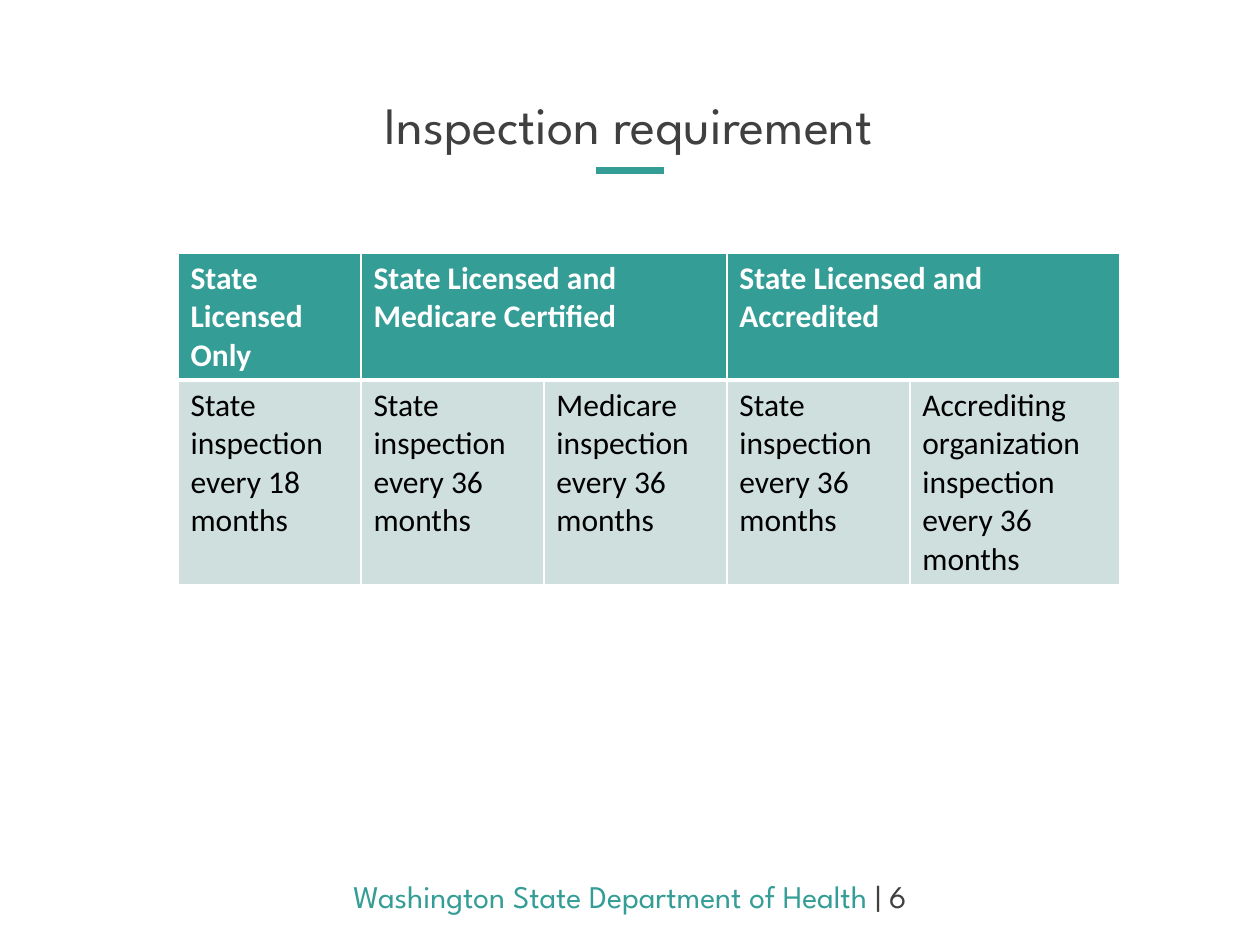
import pptx
import pptx.util
import pptx.dml.color
import pptx.enum.text
import pptx.enum.shapes
import pptx.oxml
import pptx.oxml.ns
from dataclasses import dataclass

TITLE = "Inspection requirement"
FOOTER = ("Washington State Department of Health ", "| 6")
GROUPS = [
    ("State Licensed Only", ["State inspection every 18 months"]),
    ("State Licensed and Medicare Certified",
     ["State inspection every 36 months", "Medicare inspection every 36 months"]),
    ("State Licensed and Accredited",
     ["State inspection every 36 months",
      "Accrediting organization inspection every 36 months"]),
]
COLUMNS = [183, 183, 183, 183, 210]
ROWS = [127, 205]


@dataclass(frozen=True)
class Theme:
    heading: str = "League Spartan"
    body: str = "Calibri"
    teal: str = "349D96"
    pale: str = "CEDFDD"
    gray: str = "404040"
    white: str = "FFFFFF"
    black: str = "000000"
    title_size: int = 30
    text_size: int = 18


T = Theme()
SCALE = 914400 // 126


def px(n):
    return pptx.util.Emu(n * SCALE)


def rgb(color):
    return pptx.dml.color.RGBColor.from_string(color)


def style(font, name, size, color, bold=False):
    font.name, font.size, font.bold = name, pptx.util.Pt(size), bold
    font.color.rgb = rgb(color)


def border(cell, side, width):
    tcPr = cell._tc.get_or_add_tcPr()
    ln = pptx.oxml.parse_xml(
        f'<a:{side} {pptx.oxml.ns.nsdecls("a")} w="{pptx.util.Pt(width)}">'
        f'<a:solidFill><a:srgbClr val="{T.white}"/></a:solidFill></a:{side}>')
    tcPr.append(ln)


def format_cell(cell, fill, color, bold, top, bottom):
    for side, width in (("lnL", 1), ("lnR", 1), ("lnT", top), ("lnB", bottom)):
        border(cell, side, width)
    cell.fill.solid()
    cell.fill.fore_color.rgb = rgb(fill)
    style(cell.text_frame.paragraphs[0].font, T.body, T.text_size, color, bold)


def add_title(s):
    sp = s.shapes.title
    sp.left, sp.top, sp.width, sp.height = px(-1), px(93), px(1260), px(67)
    tf = sp.text_frame
    tf.text = TITLE
    tf.auto_size = pptx.enum.text.MSO_AUTO_SIZE.NONE
    tf.vertical_anchor = pptx.enum.text.MSO_ANCHOR.TOP
    p = tf.paragraphs[0]
    p.alignment = pptx.enum.text.PP_ALIGN.CENTER
    p.line_spacing = 0.9
    p.space_before = pptx.util.Pt(10)
    style(p.font, T.heading, T.title_size, T.gray)


def add_rule(s):
    line = s.shapes.add_connector(
        pptx.enum.shapes.MSO_CONNECTOR.STRAIGHT, px(596), px(171), px(664), px(171))
    line.line.color.rgb = rgb(T.teal)
    line.line.width = pptx.util.Pt(4)
    line._element.spPr.append(pptx.oxml.parse_xml(
        f'<a:effectLst {pptx.oxml.ns.nsdecls("a")}/>'))


def add_footer(s):
    tf = s.shapes.add_textbox(px(0), px(871), px(1260), px(50)).text_frame
    tf.word_wrap = True
    p = tf.paragraphs[0]
    p.alignment = pptx.enum.text.PP_ALIGN.CENTER
    for text, color in zip(FOOTER, (T.teal, T.gray)):
        r = p.add_run()
        r.text = text
        style(r.font, T.heading, T.text_size, color)


def add_inspections(s):
    table = s.shapes.add_table(len(ROWS), len(COLUMNS), px(178), px(253),
                               px(sum(COLUMNS)), px(sum(ROWS))).table
    table.horz_banding = False
    for column, width in zip(table.columns, COLUMNS):
        column.width = px(width)
    for row, height in zip(table.rows, ROWS):
        row.height = px(height)
    col = 0
    for heading, inspections in GROUPS:
        head = table.cell(0, col)
        head.text = heading
        for i, text in enumerate(inspections, col):
            table.cell(1, i).text = text
            format_cell(table.cell(0, i), T.teal, T.white, True, 1, 3)
            format_cell(table.cell(1, i), T.pale, T.black, False, 3, 1)
        col += len(inspections)
        if len(inspections) > 1:
            head.merge(table.cell(0, col - 1))


def main():
    prs = pptx.Presentation()
    prs.slide_width, prs.slide_height = px(1260), px(945)
    s = prs.slides.add_slide(prs.slide_layouts[5])
    add_rule(s)
    add_footer(s)
    add_title(s)
    add_inspections(s)
    prs.save("out.pptx")


if __name__ == "__main__":
    main()
